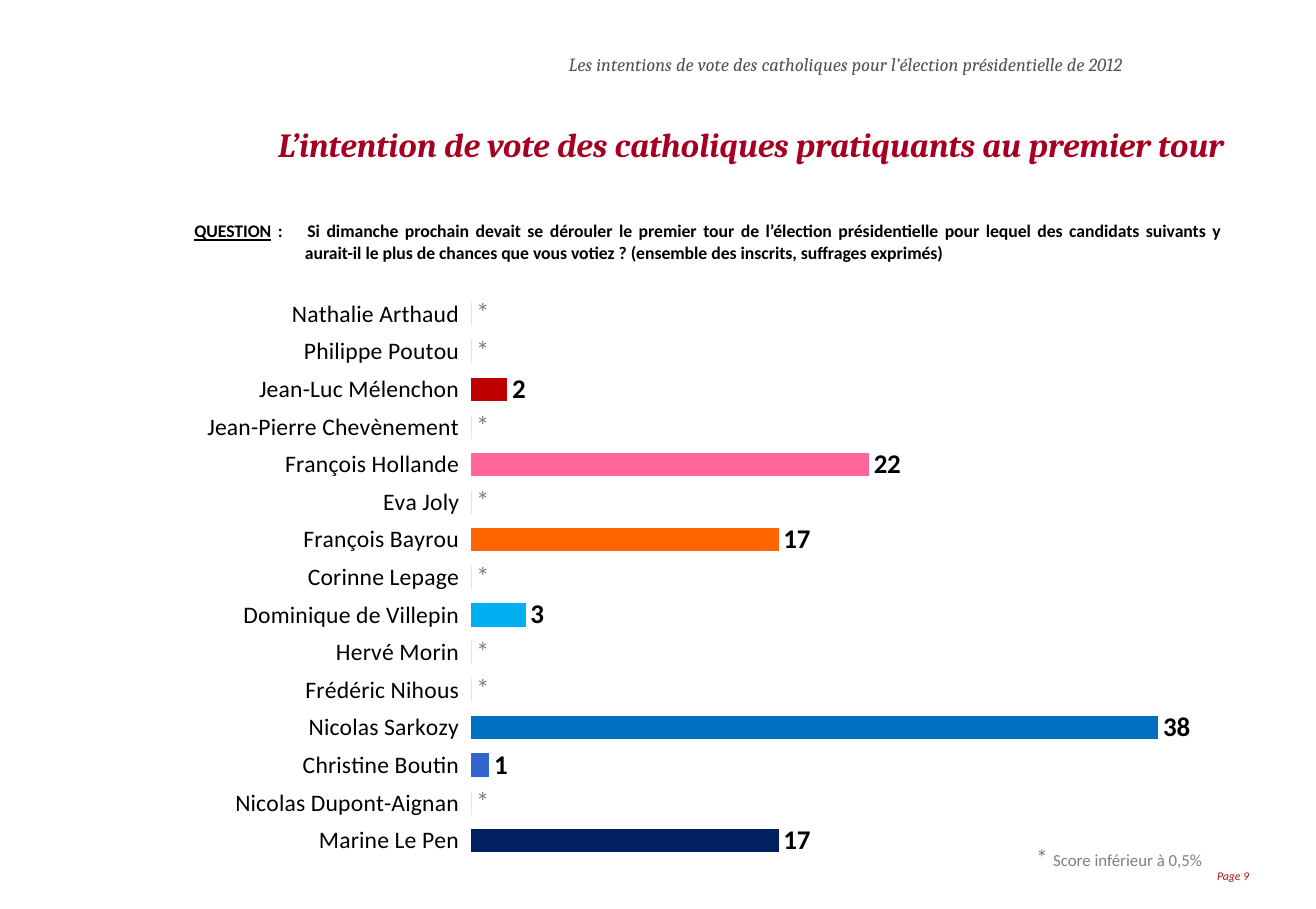
from dataclasses import dataclass

from lxml import etree
from pptx import Presentation
from pptx.chart.data import CategoryChartData
from pptx.dml.color import RGBColor
from pptx.enum.chart import XL_CHART_TYPE, XL_LABEL_POSITION, XL_TICK_LABEL_POSITION, XL_TICK_MARK
from pptx.enum.text import MSO_ANCHOR, MSO_AUTO_SIZE, PP_ALIGN
from pptx.oxml import parse_xml
from pptx.oxml.ns import nsdecls, qn
from pptx.util import Pt

BAR_CHART = XL_CHART_TYPE.BAR_CLUSTERED
OUTSIDE_END = XL_LABEL_POSITION.OUTSIDE_END
LABELS_LOW = XL_TICK_LABEL_POSITION.LOW
NO_TICK = XL_TICK_MARK.NONE
TOP, MIDDLE = MSO_ANCHOR.TOP, MSO_ANCHOR.MIDDLE
LEFT, JUSTIFY = PP_ALIGN.LEFT, PP_ALIGN.JUSTIFY
NO_AUTOFIT = MSO_AUTO_SIZE.NONE

BLACK = RGBColor(0x00, 0x00, 0x00)
GREY = RGBColor(0x80, 0x80, 0x80)
HEADER_GREY = RGBColor(0x58, 0x50, 0x56)
PAGE_RED = RGBColor(0xB5, 0x12, 0x1B)
TITLE_RED = RGBColor(0xA5, 0x00, 0x21)
DARK_RED = RGBColor(0xC0, 0x00, 0x00)
PINK = RGBColor(0xFF, 0x66, 0x99)
ORANGE = RGBColor(0xFF, 0x66, 0x00)
SKY = RGBColor(0x00, 0xB0, 0xF0)
BLUE = RGBColor(0x00, 0x70, 0xC0)
MID_BLUE = RGBColor(0x33, 0x66, 0xCC)
NAVY = RGBColor(0x00, 0x20, 0x60)


@dataclass
class TextRun:
    text: str
    size: float
    colour: RGBColor
    font: str = "Calibri"
    bold: bool = False
    italic: bool = False
    underline: bool = False


@dataclass
class TextBlock:
    left: float
    top: float
    width: float
    height: float
    runs: list[TextRun]
    insets: tuple[float, float, float, float] = (0, 0, 0, 0)
    anchor: MSO_ANCHOR = MIDDLE
    alignment: PP_ALIGN = LEFT
    hanging: float = 0


@dataclass
class Candidate:
    name: str
    score: int = 0
    colour: RGBColor = TITLE_RED


HEADER = TextBlock(337, 29.5, 399.6, 17.3, [
    TextRun("Les intentions de vote des catholiques pour l’élection présidentielle de 2012",
            11, HEADER_GREY, "Cambria", italic=True)])
TITLE = TextBlock(164.9, 54, 582.5, 62.6, [
    TextRun("L’intention de vote des catholiques pratiquants au premier tour",
            20, TITLE_RED, "Cambria", bold=True, italic=True)])
QUESTION = TextBlock(108.7, 117.4, 641.5, 51.8, [
    TextRun("QUESTION", 10.5, BLACK, bold=True, underline=True),
    TextRun(" :\tSi dimanche prochain devait se dérouler le premier tour de l’élection "
            "présidentielle pour lequel des candidats suivants y aurait-il le plus de chances "
            "que vous votiez ? (ensemble des inscrits, suffrages exprimés)",
            10.5, BLACK, bold=True)],
    insets=(6.5, 13, 26, 13), anchor=TOP, alignment=JUSTIFY, hanging=65.5)
FOOTNOTE = TextBlock(607, 496.1, 134.6, 24.5, [
    TextRun("* ", 14, GREY), TextRun("Score inférieur à 0,5%", 10, GREY)],
    insets=(7.2, 3.6, 7.2, 3.6), anchor=TOP)
PAGE_NUMBER = TextBlock(721.4, 511.9, 48.2, 13.7, [TextRun("Page 9", 7, PAGE_RED, italic=True)])

CANDIDATES = [
    Candidate("Nathalie Arthaud"),
    Candidate("Philippe Poutou"),
    Candidate("Jean-Luc Mélenchon", 2, DARK_RED),
    Candidate("Jean-Pierre Chevènement"),
    Candidate("François Hollande", 22, PINK),
    Candidate("Eva Joly"),
    Candidate("François Bayrou", 17, ORANGE),
    Candidate("Corinne Lepage"),
    Candidate("Dominique de Villepin", 3, SKY),
    Candidate("Hervé Morin"),
    Candidate("Frédéric Nihous"),
    Candidate("Nicolas Sarkozy", 38, BLUE),
    Candidate("Christine Boutin", 1, MID_BLUE),
    Candidate("Nicolas Dupont-Aignan"),
    Candidate("Marine Le Pen", 17, NAVY),
]


def style_font(font, name: str, size: float, colour: RGBColor, bold: bool = False) -> None:
    font.name, font.size, font.bold = name, Pt(size), bold
    font.color.rgb = colour


def fill_text(shape, block: TextBlock) -> None:
    shape.left, shape.top = Pt(block.left), Pt(block.top)
    shape.width, shape.height = Pt(block.width), Pt(block.height)
    frame = shape.text_frame
    frame.word_wrap = True
    frame.auto_size = NO_AUTOFIT
    frame.vertical_anchor = block.anchor
    (frame.margin_left, frame.margin_top,
     frame.margin_right, frame.margin_bottom) = map(Pt, block.insets)
    paragraph = frame.paragraphs[0]
    paragraph.alignment = block.alignment
    if block.hanging:
        properties = paragraph._p.get_or_add_pPr()
        properties.set("marL", str(Pt(block.hanging)))
        properties.set("indent", str(-Pt(block.hanging)))
    for item in block.runs:
        run = paragraph.add_run()
        run.text = item.text
        style_font(run.font, item.font, item.size, item.colour, item.bold)
        run.font.italic = item.italic
        run.font.underline = item.underline


def set_plot_area(chart, x: float, y: float, width: float, height: float) -> None:
    plot_area = chart._chartSpace.chart.plotArea
    for old_layout in plot_area.findall(qn("c:layout")):
        plot_area.remove(old_layout)
    layout = parse_xml(f"<c:layout {nsdecls('c')}><c:manualLayout/></c:layout>")
    settings = {"layoutTarget": "inner", "xMode": "edge", "yMode": "edge",
                "x": x, "y": y, "w": width, "h": height}
    for tag, value in settings.items():
        etree.SubElement(layout[0], qn(f"c:{tag}")).set("val", str(value))
    plot_area.insert(0, layout)


def add_score_chart(slide, candidates: list[Candidate]) -> None:
    data = CategoryChartData(number_format="0")
    data.categories = [candidate.name for candidate in candidates]
    data.add_series("Intentions de vote", [candidate.score for candidate in candidates])
    chart = slide.shapes.add_chart(BAR_CHART, Pt(43.9), Pt(175), Pt(717.8), Pt(345.6), data).chart
    chart.has_title = False
    chart.has_legend = False
    style_font(chart.font, "Arial", 12, BLACK, bold=True)
    set_plot_area(chart, 0.328, 0, 0.672, 0.967)

    # Axes
    names = chart.category_axis
    names.reverse_order = True
    names.major_tick_mark = NO_TICK
    names.tick_label_position = LABELS_LOW
    names.format.line.fill.background()
    style_font(names.tick_labels.font, "Calibri", 14, BLACK)
    scores = chart.value_axis
    scores.minimum_scale, scores.maximum_scale = 0, 45
    scores.has_major_gridlines = False
    scores.visible = False

    # Bars and their labels
    plot = chart.plots[0]
    plot.gap_width, plot.overlap = 60, 15
    plot.vary_by_categories = False
    series = plot.series[0]
    series.format.fill.solid()
    series.format.fill.fore_color.rgb = TITLE_RED
    labels = series.data_labels
    labels.show_value = True
    labels.position = OUTSIDE_END
    style_font(labels.font, "Calibri", 16, BLACK, bold=True)
    for index, candidate in enumerate(candidates):
        point = series.points[index]
        if candidate.score:
            point.format.fill.solid()
            point.format.fill.fore_color.rgb = candidate.colour
        else:
            run = point.data_label.text_frame.paragraphs[0].add_run()
            run.text = "*"
            style_font(run.font, "Calibri", 16, GREY)
            point.data_label.position = OUTSIDE_END


def main() -> None:
    presentation = Presentation()
    presentation.slide_width, presentation.slide_height = Pt(780), Pt(538.6)
    slide = presentation.slides.add_slide(presentation.slide_layouts[5])
    fill_text(slide.shapes.title, TITLE)
    add_score_chart(slide, CANDIDATES)
    for block in (HEADER, QUESTION, FOOTNOTE, PAGE_NUMBER):
        fill_text(slide.shapes.add_textbox(0, 0, 0, 0), block)
    presentation.save("out.pptx")


if __name__ == "__main__":
    main()
